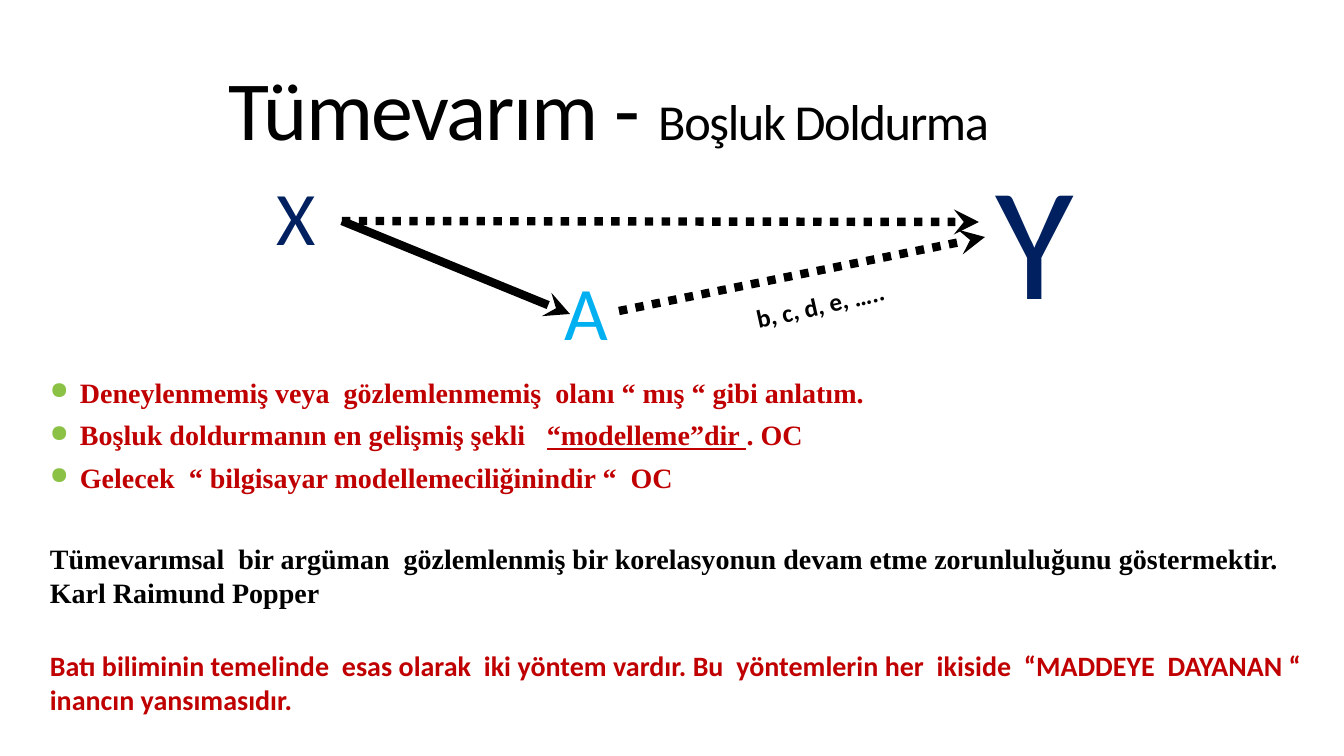
from lxml.etree import SubElement
from pptx import Presentation
from pptx.dml.color import RGBColor
from pptx.enum.dml import MSO_LINE
from pptx.enum.shapes import MSO_CONNECTOR
from pptx.enum.text import MSO_ANCHOR, PP_ALIGN
from pptx.oxml.ns import qn
from pptx.util import Emu, Pt

BLACK = RGBColor(0x00, 0x00, 0x00)
NAVY = RGBColor(0x00, 0x20, 0x60)
SKY = RGBColor(0x00, 0xB0, 0xF0)
RED = RGBColor(0xC0, 0x00, 0x00)
BULLET_GREEN = "8BC145"
SANS, SERIF = "Calibri", "Times New Roman"

WIDTH, HEIGHT = 1344, 756  # px
SCALE = 12192000 / WIDTH  # EMU per px

# Content: each paragraph is a list of (text, format) spans
TITLE = [("Tümevarım - ", {"size": 60}), ("Boşluk Doldurma", {"size": 36})]
LETTERS = {  # letter: (box, size, colour)
    "X": ((266, 165, 60, 102), 54, NAVY),
    "Y": ((985, 134, 100, 206), 115, NAVY),
    "A": ((553, 260, 66, 102), 54, SKY),
}
STEPS = ("b, c, d, e, …..", (745, 284, 156, 40), -12.7)
BULLETS = [
    [("Deneylenmemiş veya  gözlemlenmemiş  olanı “ mış “ gibi anlatım.", {})],
    [("Boşluk doldurmanın en gelişmiş şekli   ", {}),
     ("“modelleme”dir ", {"underline": True}), (". OC", {})],
    [("Gelecek  “ bilgisayar modellemeciliğinindir “  OC", {})],
]
POPPER = ("Tümevarımsal  bir argüman  gözlemlenmiş bir korelasyonun devam etme "
          "zorunluluğunu göstermektir. Karl Raimund Popper")
WEST = ("Batı biliminin temelinde  esas olarak  iki yöntem vardır. Bu  yöntemlerin "
        "her  ikiside  “MADDEYE  DAYANAN “ inancın yansımasıdır.")
ARROW_START = (342, 221)
ARROWS = [((979, 222), True), ((570, 314), False)]  # (end, dotted)


def px(length):
    return Emu(round(length * SCALE))


def add_box(page, place, wrap=True):
    box = page.shapes.add_textbox(*map(px, place))
    box.text_frame.word_wrap = wrap
    box.text_frame.vertical_anchor = MSO_ANCHOR.TOP
    return box


def add_text(para, text, size=20, font=SANS, color=BLACK, bold=False,
             underline=False, tracking=0):
    span = para.add_run()
    span.text = text
    span.font.size = Pt(size)
    span.font.name = font
    span.font.color.rgb = color
    span.font.bold = bold
    span.font.underline = underline
    if tracking:
        span.font._element.set("spc", str(tracking * 100))


def add_bullet(para):
    properties = para._p.get_or_add_pPr()
    properties.set("marL", str(px(30)))
    properties.set("indent", str(-px(30)))
    color = SubElement(properties, qn("a:buClr"))
    SubElement(color, qn("a:srgbClr"), val=BULLET_GREEN)
    SubElement(properties, qn("a:buSzPct"), val="85000")
    SubElement(properties, qn("a:buChar"), char="●")


def add_arrow(page, start, end, dotted):
    arrow = page.shapes.add_connector(
        MSO_CONNECTOR.STRAIGHT, *map(px, start + end))
    arrow.line.color.rgb = BLACK
    arrow.line.width = Pt(6)
    if dotted:
        arrow.line.dash_style = MSO_LINE.ROUND_DOT
    SubElement(arrow.line._get_or_add_ln(), qn("a:tailEnd"), type="stealth")
    SubElement(arrow._element.spPr, qn("a:effectLst"))
    return arrow


def main():
    deck = Presentation()
    deck.slide_width, deck.slide_height = px(WIDTH), px(HEIGHT)
    page = deck.slides.add_slide(deck.slide_layouts[6])

    # Title
    para = add_box(page, (219, 52, 907, 99)).text_frame.paragraphs[0]
    for text, style in TITLE:
        add_text(para, text, tracking=-1, **style)

    # Letters of the diagram
    nodes = {}
    for letter, (place, size, color) in LETTERS.items():
        nodes[letter] = add_box(page, place, wrap=False)
        para = nodes[letter].text_frame.paragraphs[0]
        para.alignment = PP_ALIGN.CENTER
        add_text(para, letter, size=size, color=color)

    # Arrows from X, then the one joining A to Y
    for end, dotted in ARROWS:
        add_arrow(page, ARROW_START, end, dotted)
    joined = add_arrow(page, (619, 311), (985, 237), True)
    joined.begin_connect(nodes["A"], 3)
    joined.end_connect(nodes["Y"], 1)

    # Slanted label
    text, place, angle = STEPS
    label = add_box(page, place, wrap=False)
    label.rotation = angle
    add_text(label.text_frame.paragraphs[0], text, size=18, bold=True)

    # Body: bullets, then two plain paragraphs set apart by spacing
    red_serif = {"font": SERIF, "color": RED}
    body = [(spans, red_serif, 6, True) for spans in BULLETS]
    body.append(([(POPPER, {})], {"font": SERIF}, 33.6, False))
    body.append(([(WEST, {})], {"color": RED}, 28, False))
    frame = add_box(page, (40, 370, 1272, 354)).text_frame
    for index, (spans, style, gap, bulleted) in enumerate(body):
        para = frame.add_paragraph() if index else frame.paragraphs[0]
        para.line_spacing = Pt(24.3)
        para.space_before = Pt(gap if index else 0)
        if bulleted:
            add_bullet(para)
        for text, extra in spans:
            add_text(para, text, bold=True, **style, **extra)
    para.alignment = PP_ALIGN.JUSTIFY

    deck.save("out.pptx")


if __name__ == "__main__":
    main()
